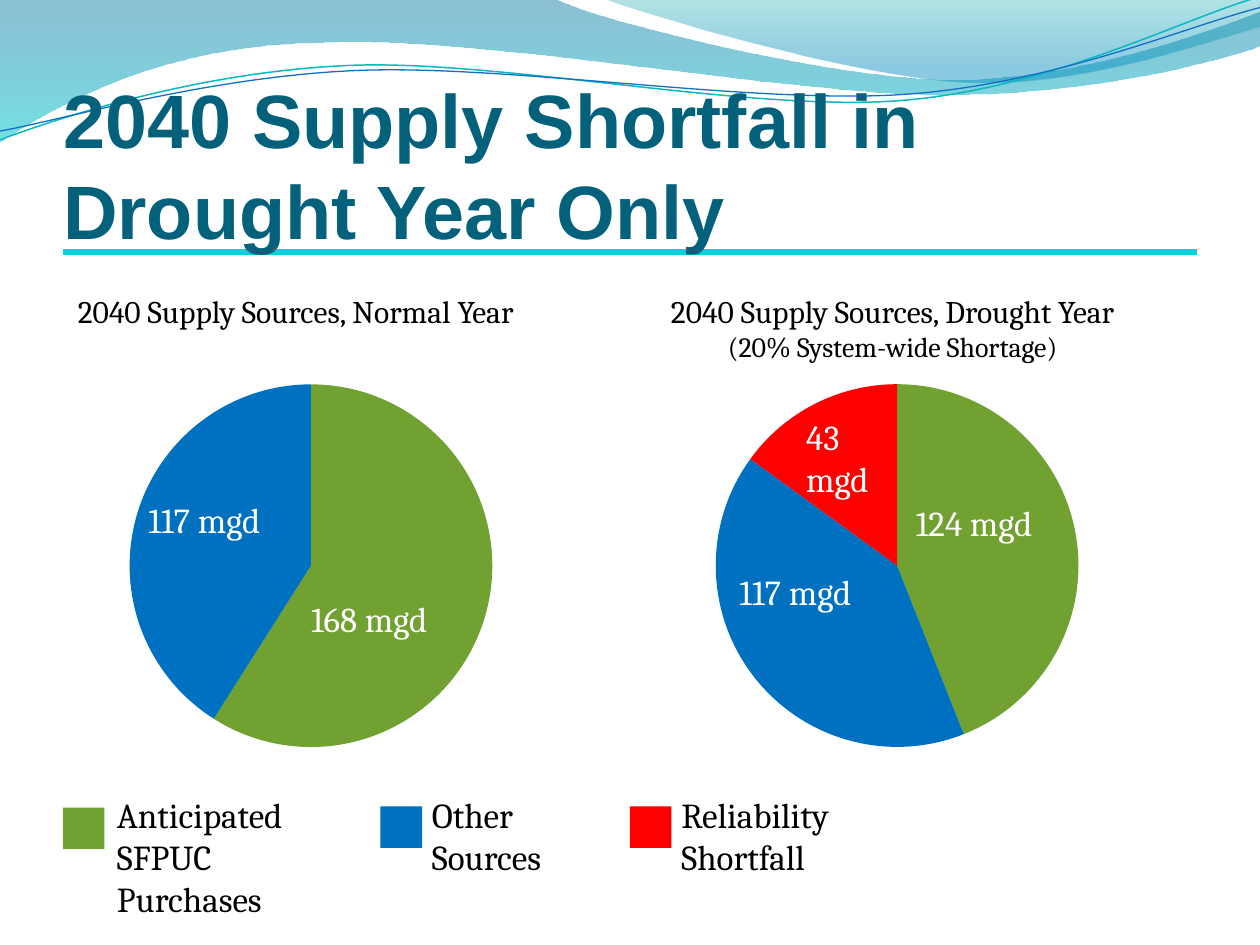
import pptx
import pptx.chart.data
import pptx.dml.color
import pptx.enum.chart
import pptx.enum.shapes
import pptx.enum.text
import pptx.oxml
import pptx.oxml.ns
import pptx.util
from pptx.util import Inches

COLORS = {
    "title": "04617B", "rule": "0BD0D9", "text": "000000", "label": "FFFFFF",
    "purchases": "71A131", "other": "0070C0", "shortfall": "FF0000",
    "deep": "0074A1", "aqua": "00C6CF", "teal": "00A1A9", "sky": "008BBF",
    "teal_line": "0AB8BF", "blue_line": "0F6FC6",
}
DISK = 2.88
BANDS = [
    ([(0, -0.01), (4.4, -0.01),
      (4.76, 0.17, 6.64, 0.63, 7.58, 0.63), (8.53, 0.63, 9.58, 0.26, 10, 0.09),
      (10.01, 0.36), (9.83, 0.44, 8.7, 0.76, 7.46, 0.75),
      (6.22, 0.75, 3.82, 0.28, 2.57, 0.34), (1.29, 0.35, 0.46, 0.83, -0.01, 1.13),
      (0, -0.01)],
     [("deep", 0, 45), ("aqua", 1, 55)]),
    ([(4.79, -0.01), (5.09, 0.11, 6.82, 0.62, 7.69, 0.65),
      (8.56, 0.69, 9.61, 0.32, 10, 0.21), (10, 0), (4.79, -0.01)],
     [("teal", 0, 30), ("sky", 0.8, 45)]),
]
STRANDS = [
    ([(0, 1.11), (0.48, 0.93, 1.58, 0.57, 2.77, 0.52),
      (3.95, 0.47, 5.93, 0.89, 7.13, 0.8), (8.33, 0.71, 9.38, 0.15, 9.98, -0.02)],
     "teal_line", 0.85),
    ([(0, 1.04), (0.47, 0.96, 1.64, 0.61, 2.83, 0.56),
      (4.03, 0.51, 5.97, 0.83, 7.17, 0.75), (8.36, 0.67, 9.41, 0.21, 10, 0.06)],
     "blue_line", 0.75),
]


def rgb(name):
    """Return the named colour."""
    return pptx.dml.color.RGBColor.from_string(COLORS[name])


def add_outline(page, steps, close):
    """Add a freeform whose six-number steps are cubic curves."""
    corners = [(Inches(step[-2]), Inches(step[-1])) for step in steps]
    builder = page.shapes.build_freeform(*corners[0])
    builder.add_line_segments(corners[1:], close=close)
    shape = builder.convert_to_shape()
    shape.shadow.inherit = False
    segments = shape.element.findall(".//" + pptx.oxml.ns.qn("a:lnTo"))
    for segment, step in zip(segments, steps[1:]):
        if len(step) == 2:
            continue
        points = "".join(
            f'<a:pt x="{Inches(x) - shape.left}" y="{Inches(y) - shape.top}"/>'
            for x, y in zip(step[::2], step[1::2]))
        curve = pptx.oxml.parse_xml(
            f'<a:cubicBezTo {pptx.oxml.ns.nsdecls("a")}>{points}</a:cubicBezTo>')
        segment.getparent().replace(segment, curve)
    return shape


def add_waves(page):
    """Draw the translucent bands and thin strands across the top."""
    for steps, stops in BANDS:
        band = add_outline(page, steps, True)
        band.line.fill.background()
        band.fill.gradient()
        band.fill.gradient_angle = 270
        for stop, (color, position, opacity) in zip(band.fill.gradient_stops, stops):
            stop.color.rgb = rgb(color)
            stop.position = position
        tags = band.element.findall(".//" + pptx.oxml.ns.qn("a:srgbClr"))
        for tag, (color, position, opacity) in zip(tags, stops):
            alpha = tag.makeelement(pptx.oxml.ns.qn("a:alpha"), {"val": str(opacity * 1000)})
            tag.append(alpha)
    for steps, color, width in STRANDS:
        strand = add_outline(page, steps, False)
        strand.fill.background()
        strand.line.color.rgb = rgb(color)
        strand.line.width = pptx.util.Pt(width)


def add_title(page, left, top, width, height, text):
    """Place the title above its rule and in front of the waves."""
    rule = page.shapes.add_connector(
        pptx.enum.shapes.MSO_CONNECTOR.STRAIGHT,
        Inches(left), Inches(2), Inches(left + width), Inches(2))
    rule.line.color.rgb = rgb("rule")
    rule.line.width = pptx.util.Pt(3)
    properties = rule.element.spPr
    properties.append(properties.makeelement(pptx.oxml.ns.qn("a:effectLst"), {}))
    title = page.shapes.title
    title.element.getparent().append(title.element)
    title.left, title.top = Inches(left), Inches(top)
    title.width, title.height = Inches(width), Inches(height)
    frame = title.text_frame
    frame.text = text
    frame.auto_size = pptx.enum.text.MSO_AUTO_SIZE.NONE
    frame.vertical_anchor = pptx.enum.text.MSO_ANCHOR.BOTTOM
    frame.margin_left = frame.margin_right = frame.margin_bottom = 0
    frame.margin_top = Inches(0.05)
    frame.paragraphs[0].alignment = pptx.enum.text.PP_ALIGN.LEFT
    span = frame.paragraphs[0].runs[0]
    span.font.name, span.font.size, span.font.bold = "Arial", pptx.util.Pt(43.2), True
    span.font.color.rgb = rgb("title")


def add_text(page, left, top, width, height, lines, sizes=(20,), color="text",
             wrap=False, align=pptx.enum.text.PP_ALIGN.LEFT):
    """Add a text box with one paragraph for each line."""
    box = page.shapes.add_textbox(Inches(left), Inches(top), Inches(width), Inches(height))
    frame = box.text_frame
    frame.word_wrap = wrap
    frame.auto_size = pptx.enum.text.MSO_AUTO_SIZE.SHAPE_TO_FIT_TEXT
    frame.text = "\n".join(lines)
    for index, para in enumerate(frame.paragraphs):
        para.alignment = align
        for span in para.runs:
            span.font.name = "Cambria"
            span.font.size = pptx.util.Pt(sizes[min(index, len(sizes) - 1)])
            span.font.color.rgb = rgb(color)


def add_pie(page, left, top, width, height, disk_left, disk_top, values, labels):
    """Add a pie with its disk at a fixed place and labels over the slices."""
    data = pptx.chart.data.CategoryChartData()
    data.categories = ["1", "2", "3"]
    data.add_series("Series 1", values)
    chart = page.shapes.add_chart(
        pptx.enum.chart.XL_CHART_TYPE.PIE, Inches(left), Inches(top),
        Inches(width), Inches(height), data).chart
    chart.has_legend = chart.has_title = False
    chart.font.name, chart.font.size = "Cambria", pptx.util.Pt(18)
    chart.font.color.rgb = rgb("text")
    plot = chart.plots[0]
    plot.vary_by_categories = True
    for index, color in enumerate(("purchases", "other", "shortfall")):
        fill = plot.series[0].points[index].format.fill
        fill.solid()
        fill.fore_color.rgb = rgb(color)
    places = {"x": (disk_left - left) / width, "y": (disk_top - top) / height,
              "w": DISK / width, "h": DISK / height}
    settings = [("layoutTarget", "inner"), ("xMode", "edge"), ("yMode", "edge")]
    settings += [(name, f"{value:.3f}") for name, value in places.items()]
    area = chart.element.find(".//" + pptx.oxml.ns.qn("c:plotArea"))
    for old in area.findall(pptx.oxml.ns.qn("c:layout")):
        area.remove(old)
    tags = "".join(f'<c:{name} val="{value}"/>' for name, value in settings)
    area.insert(0, pptx.oxml.parse_xml(
        f'<c:layout {pptx.oxml.ns.nsdecls("c")}><c:manualLayout>{tags}'
        '</c:manualLayout></c:layout>'))
    for label_left, label_top, label_width, label_height, lines in labels:
        add_text(page, label_left, label_top, label_width, label_height, lines, color="label")


def add_key(page, left, top, color, text_left, width, height, lines):
    """Add a legend swatch with its text."""
    swatch = page.shapes.add_shape(
        pptx.enum.shapes.MSO_SHAPE.RECTANGLE,
        Inches(left), Inches(top), Inches(0.33), Inches(0.33))
    swatch.shadow.inherit = False
    swatch.fill.solid()
    swatch.fill.fore_color.rgb = rgb(color)
    swatch.line.fill.background()
    add_text(page, text_left, 6.25, width, height, lines, wrap=True)


def main():
    """Build the slide and save it."""
    deck = pptx.Presentation()
    deck.slide_width, deck.slide_height = Inches(10), Inches(7.5)
    page = deck.slides.add_slide(deck.slide_layouts[5])
    add_waves(page)
    add_title(page, 0.5, 0.77, 9, 1.25, "2040 Supply Shortfall in Drought Year Only")
    add_pie(page, 0.89, 2.66, 3.15, 3.65, 1.03, 3.05, (59, 41, 0), [
        (2.37, 4.69, 1.29, 0.44, ["168 mgd"]), (1.08, 3.91, 1.27, 0.44, ["117 mgd"])])
    add_pie(page, 5.46, 2.81, 3.25, 3.42, 5.68, 3.05, (44, 41, 15), [
        (7.17, 3.93, 1.29, 0.44, ["124 mgd"]), (5.77, 4.48, 1.27, 0.44, ["117 mgd"]),
        (6.3, 3.25, 0.75, 0.77, ["43", "mgd"])])
    add_text(page, 0.52, 2.27, 4.13, 0.4, ["2040 Supply Sources, Normal Year"], (18,))
    add_text(page, 4.98, 2.27, 4.21, 0.67,
             ["2040 Supply Sources, Drought Year", "(20% System-wide Shortage)"],
             (18, 16), align=pptx.enum.text.PP_ALIGN.CENTER)
    add_key(page, 0.5, 6.41, "purchases", 0.83, 1.75, 1.11, ["Anticipated", "SFPUC Purchases"])
    add_key(page, 3.02, 6.4, "other", 3.33, 1.32, 0.77, ["Other", "Sources"])
    add_key(page, 5, 6.4, "shortfall", 5.31, 2.4, 0.77, ["Reliability Shortfall"])
    deck.save("out.pptx")


if __name__ == "__main__":
    main()
